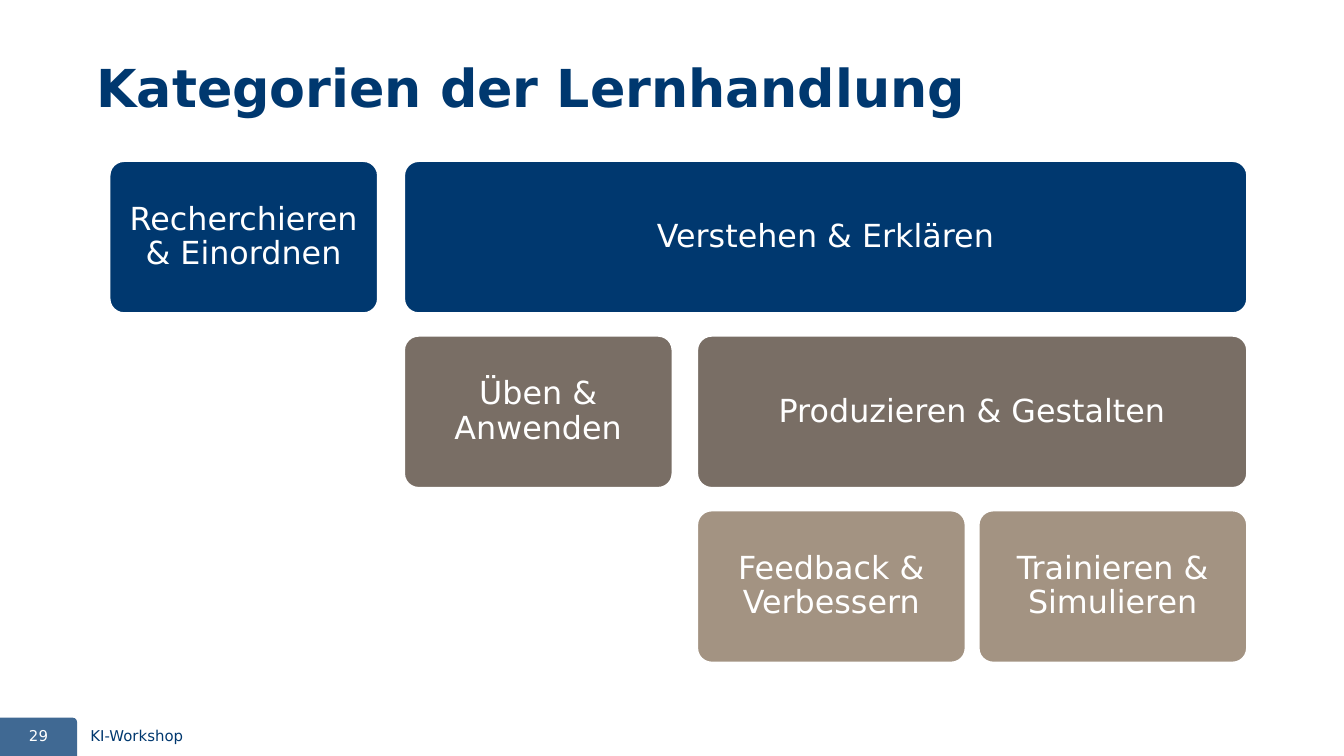
from dataclasses import dataclass

from lxml.etree import SubElement
from pptx import Presentation
from pptx.dml.color import RGBColor
from pptx.enum.shapes import MSO_SHAPE as Shape
from pptx.enum.text import MSO_ANCHOR as Anchor, PP_ALIGN as Align
from pptx.oxml.ns import qn
from pptx.util import Pt


@dataclass(frozen=True)
class Theme:
    font: str = "DejaVu Sans"
    navy: RGBColor = RGBColor.from_string("00386F")
    taupe: RGBColor = RGBColor.from_string("796E65")
    sand: RGBColor = RGBColor.from_string("A39382")
    white: RGBColor = RGBColor.from_string("FFFFFF")
    title_size: int = 28
    tile_size: int = 17
    footer_size: int = 8


theme = Theme()


def add_text(sp, text, size, color, align=Align.LEFT, anchor=Anchor.MIDDLE,
             inset=(7.2, 3.6), bold=False):
    """Write one wrapped paragraph; inset is (horizontal, vertical) in points."""
    tf = sp.text_frame
    tf.word_wrap = True
    tf.vertical_anchor = anchor
    tf.margin_left = tf.margin_right = Pt(inset[0])
    tf.margin_top = tf.margin_bottom = Pt(inset[1])
    p = tf.paragraphs[0]
    p.alignment = align
    r = p.add_run()
    r.text = text
    r.font.name = theme.font
    r.font.size = Pt(size)
    r.font.bold = bold
    r.font.color.rgb = color
    return p


def add_block(preset, left, top, width, height, corner, color):
    sp = s.shapes.add_shape(preset, Pt(left), Pt(top), Pt(width), Pt(height))
    sp.shadow.inherit = False
    sp.adjustments[0] = corner
    sp.fill.solid()
    sp.fill.fore_color.rgb = color
    return sp


prs = Presentation()
prs.slide_width, prs.slide_height = Pt(720), Pt(405)
s = prs.slides.add_slide(prs.slide_layouts[6])

# Page number tab
tab = add_block(Shape.ROUND_1_RECTANGLE, 0, 384.5, 41.3, 20.5, 0.114, theme.navy)
tab.line.fill.background()
fill_color = tab.element.spPr.find(qn("a:solidFill"))[0]
SubElement(fill_color, qn("a:alpha"), val="75000")

# Title
title = s.shapes.add_textbox(Pt(46), Pt(24), Pt(572), Pt(62))
add_text(title, "Kategorien der Lernhandlung", theme.title_size, theme.navy,
         anchor=Anchor.TOP, inset=(5.7, 5.7), bold=True)

# Tiles: each row starts one column further right, its last tile reaches the right edge
columns = [58.2, 216, 373, 523.8]
tile_width, tile_height = 144.8, 82.5
right_edge = columns[-1] + tile_width
first_top, row_step = 85.8, 93.6
rows = [
    (theme.navy, ["Recherchieren & Einordnen", "Verstehen & Erklären"]),
    (theme.taupe, ["Üben & Anwenden", "Produzieren & Gestalten"]),
    (theme.sand, ["Feedback & Verbessern", "Trainieren & Simulieren"]),
]
for i, (color, labels) in enumerate(rows):
    widths = [tile_width, right_edge - columns[i + 1]]
    for left, width, label in zip(columns[i:], widths, labels):
        tile = add_block(Shape.ROUNDED_RECTANGLE, left, first_top + i * row_step,
                         width, tile_height, 0.1, color)
        tile.line.color.rgb = theme.white
        tile.line.width = Pt(2)
        p = add_text(tile, label, theme.tile_size, theme.white, Align.CENTER, inset=(5, 5))
        p.line_spacing = 0.9

# Footer
for left, width, text, color, align in [
    (41.3, 328, "KI-Workshop", theme.navy, Align.LEFT),
    (0, 41.3, "29", theme.white, Align.CENTER),
]:
    box = s.shapes.add_textbox(Pt(left), Pt(386), Pt(width), Pt(16.5))
    add_text(box, text, theme.footer_size, color, align)

prs.save("out.pptx")
